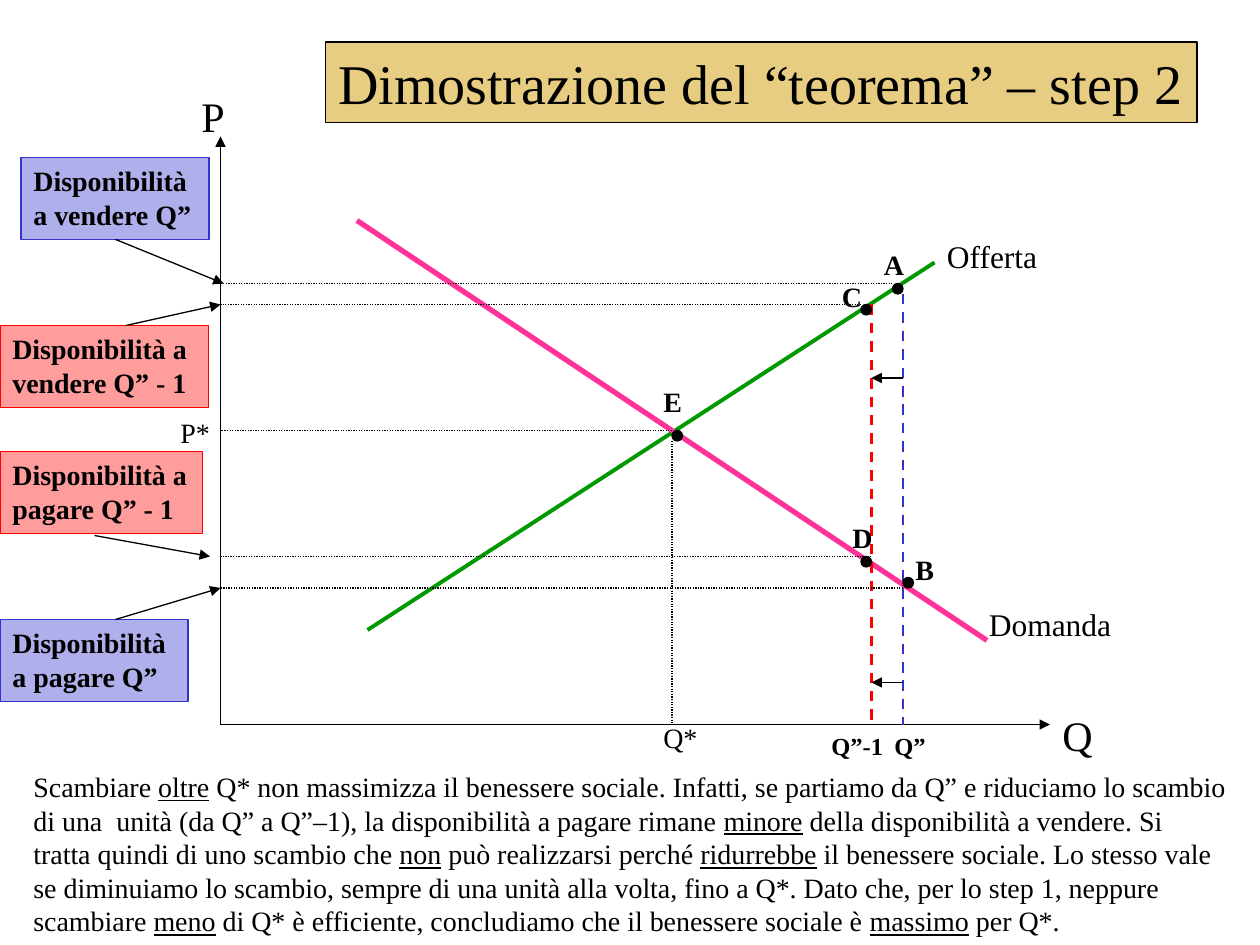
from dataclasses import dataclass

from lxml.etree import SubElement
from pptx import Presentation
from pptx.dml.color import RGBColor as Rgb
from pptx.enum.dml import MSO_LINE as Dash
from pptx.enum.shapes import MSO_CONNECTOR as Connector, MSO_SHAPE as Preset
from pptx.enum.text import MSO_ANCHOR as Anchor, MSO_AUTO_SIZE as AutoSize, PP_ALIGN as Align
from pptx.oxml.ns import qn
from pptx.util import Pt

EMU_PER_PX = 7620


@dataclass(frozen=True)
class Theme:
    font: str = "Times New Roman"
    ink: str = "000000"
    supply: str = "009900"
    demand: str = "FF3399"
    current: str = "3333CC"
    reduced: str = "FF0000"
    banner: str = "CC9900"
    title: int = 32
    axis: int = 24
    curve: int = 18
    body: int = 16
    tick: int = 14
    thin: float = 0.75


THEME = Theme()

PRICE_AXIS = 210
QUANTITY_AXIS = 690
Q_STAR = 640
Q_REDUCED = 830
Q_CURRENT = 860
P_STAR = 410

EXPLANATION = (
    "Scambiare _oltre_ Q* non massimizza il benessere sociale. Infatti, se partiamo da Q” "
    "e riduciamo lo scambio di una  unità (da Q” a Q”–1), la disponibilità a pagare rimane "
    "_minore_ della disponibilità a vendere. Si tratta quindi di uno scambio che _non_ può "
    "realizzarsi perché _ridurrebbe_ il benessere sociale. Lo stesso vale se diminuiamo lo "
    "scambio, sempre di una unità alla volta, fino a Q*. Dato che, per lo step 1, neppure "
    "scambiare _meno_ di Q* è efficiente, concludiamo che il benessere sociale è _massimo_ "
    "per Q*."
)


def px(length):
    return length * EMU_PER_PX


def apply_format(target, values):
    for name, value in values.items():
        setattr(target, name, value)


def write_text(shape, text, size, bold=False, wrap=False, fit=AutoSize.SHAPE_TO_FIT_TEXT):
    frame = shape.text_frame
    apply_format(frame, {
        "word_wrap": wrap,
        "auto_size": fit,
        "vertical_anchor": Anchor.TOP,
    })
    for index, line in enumerate(text.split("\n")):
        para = frame.add_paragraph() if index else frame.paragraphs[0]
        para.alignment = Align.LEFT
        for position, part in enumerate(line.split("_")):
            span = para.add_run()
            span.text = part
            apply_format(span.font, {
                "name": THEME.font,
                "size": Pt(size),
                "bold": bold,
                "underline": position % 2 == 1,
            })
            span.font.color.rgb = Rgb.from_string(THEME.ink)


def paint(shape, fill, outline, opacity=100):
    shape.fill.solid()
    shape.fill.fore_color.rgb = Rgb.from_string(fill)
    shape.line.color.rgb = Rgb.from_string(outline)
    shape.line.width = Pt(THEME.thin)
    if opacity < 100:
        color = shape.element.spPr.find(qn("a:solidFill"))[0]
        SubElement(color, qn("a:alpha"), val=str(opacity * 1000))


def add_title(page, text, bounds):
    title = page.shapes.title
    apply_format(title, dict(zip(("left", "top", "width", "height"), map(px, bounds))))
    paint(title, THEME.banner, THEME.ink, 49)
    write_text(title, text, THEME.title, fit=AutoSize.NONE)


def add_label(page, text, bounds, size=THEME.body, bold=False, wrap=False):
    box = page.shapes.add_textbox(*map(px, bounds))
    write_text(box, text, size, bold, wrap)


def add_callout(page, text, bounds, color):
    box = page.shapes.add_shape(Preset.RECTANGLE, *map(px, bounds))
    box.shadow.inherit = False
    paint(box, color, color, 39)
    write_text(box, text, THEME.body, bold=True)


def add_point(page, left, top):
    point = page.shapes.add_shape(Preset.OVAL, *map(px, (left, top, 10, 10)))
    point.shadow.inherit = False
    paint(point, THEME.ink, THEME.ink)


def add_line(page, ends, color=THEME.ink, width=THEME.thin, dash=None, arrow=False):
    connector = page.shapes.add_connector(Connector.STRAIGHT, *map(px, ends))
    line = connector.line
    line.color.rgb = Rgb.from_string(color)
    apply_format(line, {"width": Pt(width), "dash_style": dash})
    properties = connector.element.spPr
    if arrow:
        SubElement(properties.find(qn("a:ln")), qn("a:tailEnd"), type="triangle")
    SubElement(properties, qn("a:effectLst"))


def draw_curves(page):
    for end in ((PRICE_AXIS, 130), (1000, QUANTITY_AXIS)):
        add_line(page, (PRICE_AXIS, QUANTITY_AXIS, *end), arrow=True)
    add_line(page, (890, 250, 350, 600), THEME.supply, 2.25)
    add_line(page, (340, 210, 940, 610), THEME.demand, 3)
    for quantity, top, color in (
        (Q_CURRENT, 280, THEME.current),
        (Q_REDUCED, 290, THEME.reduced),
    ):
        add_line(page, (quantity, top, quantity, QUANTITY_AXIS), color, 1.5, Dash.DASH)


def draw_guides(page):
    for right, price in ((820, 290), (860, 560), (850, 270), (830, 530), (Q_STAR, P_STAR)):
        add_line(page, (right, price, PRICE_AXIS, price), dash=Dash.ROUND_DOT)
    add_line(page, (Q_STAR, 420, Q_STAR, QUANTITY_AXIS), dash=Dash.ROUND_DOT)
    for height in (360, 650):
        add_line(page, (Q_CURRENT, height, Q_REDUCED, height), arrow=True)


def draw_callouts(page):
    for text, bounds, color, pointer in (
        ("Disponibilità\na vendere Q”", (20, 150, 179, 78), THEME.current, (110, 228, 213, 270)),
        ("Disponibilità a\nvendere Q” - 1", (0, 310, 199, 78), THEME.reduced, (120, 310, 210, 290)),
        ("Disponibilità a\npagare Q” - 1", (0, 430, 193, 78), THEME.reduced, (90, 510, 200, 530)),
        ("Disponibilità\na pagare Q”", (0, 590, 179, 78), THEME.current, (110, 590, 210, 560)),
    ):
        add_callout(page, text, bounds, color)
        add_line(page, pointer, arrow=True)


def draw_points(page):
    for name, label_left, label_top, left, top in (
        ("A", 830, 230, 850, 270),
        ("B", 860, 520, 860, 550),
        ("C", 790, 260, 820, 290),
        ("D", 800, 490, 820, 530),
        ("E", 620, 360, 640, 410),
    ):
        add_point(page, left, top)
        add_label(page, name, (label_left, label_top, 43, 44), bold=True)


def draw_labels(page):
    for text, bounds, size, bold in (
        ("P", (180, 80, 65, 60), THEME.axis, False),
        ("Q", (1000, 670, 65, 60), THEME.axis, False),
        ("Offerta", (890, 220, 114, 48), THEME.curve, False),
        ("Domanda", (930, 570, 146, 48), THEME.curve, False),
        ("P*", (160, 390, 56, 44), THEME.body, False),
        ("Q*", (620, 680, 62, 44), THEME.body, False),
        ("Q”", (840, 690, 58, 40), THEME.tick, True),
        ("Q”-1", (780, 690, 77, 40), THEME.tick, True),
    ):
        add_label(page, text, bounds, size, bold)


def main():
    deck = Presentation()
    apply_format(deck, {"slide_width": px(1200), "slide_height": px(900)})
    page = deck.slides.add_slide(deck.slide_layouts[5])
    add_title(page, "Dimostrazione del “teorema” – step 2", (310, 40, 830, 77))
    draw_curves(page)
    draw_guides(page)
    draw_callouts(page)
    draw_points(page)
    draw_labels(page)
    add_label(page, EXPLANATION, (20, 727, 1160, 173), wrap=True)
    deck.save("out.pptx")


if __name__ == "__main__":
    main()
